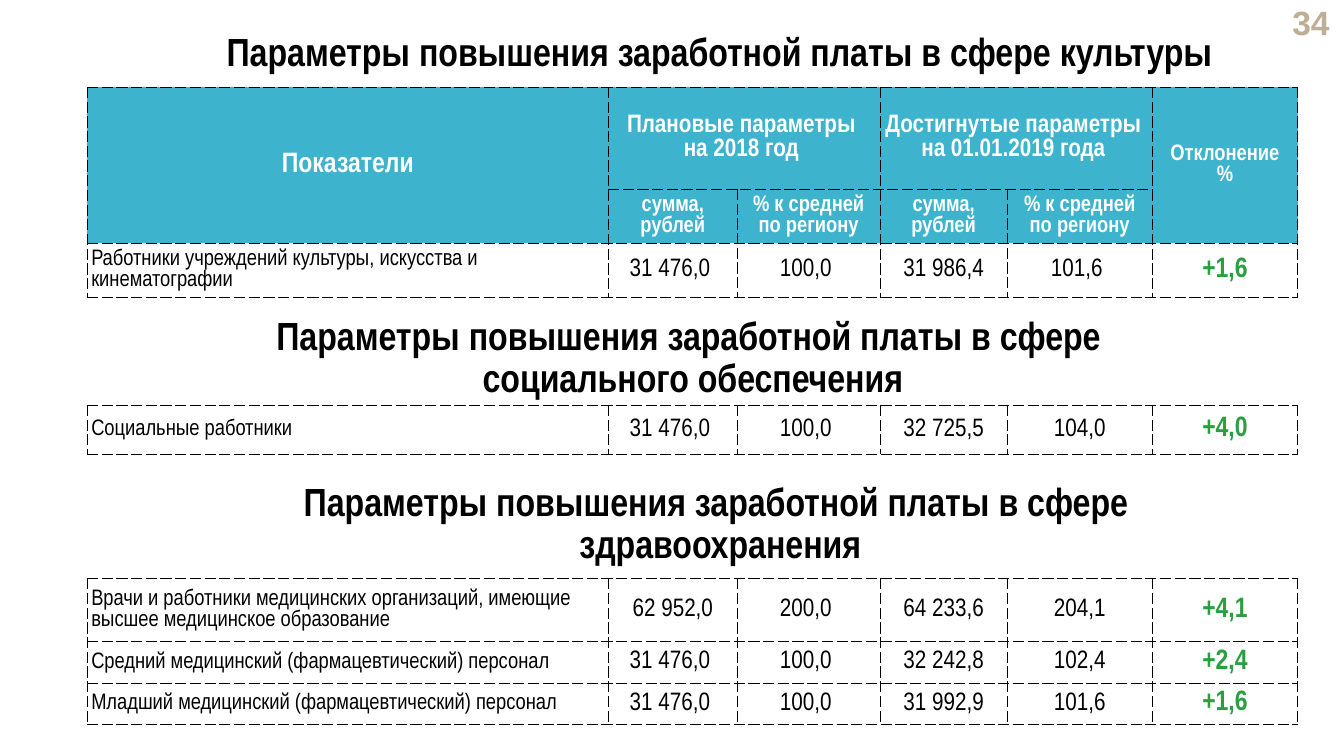
from dataclasses import dataclass

import pptx
import pptx.dml.color
import pptx.enum.text
import pptx.oxml
import pptx.oxml.ns
import pptx.util
from pptx.util import Cm

COLORS = {
    "text": "000000",
    "header": "3DB3CD",
    "header_text": "FFFFFF",
    "body": "FFFFFF",
    "growth": "299F3F",
    "page_number": "BFAE96",
}
NARROW = "Arial Narrow"
ALIGN = pptx.enum.text.PP_ALIGN
MIDDLE = pptx.enum.text.MSO_ANCHOR.MIDDLE
TOP = pptx.enum.text.MSO_ANCHOR.TOP

TABLE_LEFT = 2.2
COLUMN_WIDTHS = [13.13, 3.25, 3.6, 3.2, 3.66, 3.66]
LAST_COLUMN = len(COLUMN_WIDTHS) - 1
HEADER_HEIGHTS = [2.57, 1.22]


@dataclass(frozen=True)
class Style:
    size: int
    color: str = "text"
    bold: bool = False
    align: ALIGN = ALIGN.CENTER
    font: str = NARROW
    line_spacing: float = 1.0


@dataclass(frozen=True)
class Label:
    text: str
    left: float
    top: float
    width: float
    height: float
    style: Style
    anchor: pptx.enum.text.MSO_ANCHOR = TOP


@dataclass(frozen=True)
class HeaderCell:
    text: str
    row: int
    column: int
    size: int
    rows: int = 1
    columns: int = 1


@dataclass(frozen=True)
class Section:
    top: float
    heights: list[float]
    rows: list[list[str]]
    has_header: bool = False


TITLE = Style(28, bold=True, line_spacing=0.9)
NAME = Style(16, align=ALIGN.LEFT)
VALUE = Style(18)
GROWTH = Style(20, "growth", bold=True)

LABELS = [
    Label("34", 31.6, 0.13, 2.16, 0.86,
          Style(24, "page_number", True, ALIGN.RIGHT, "Arial"), MIDDLE),
    Label("Параметры повышения заработной платы в сфере культуры",
          3.15, 0.71, 29.95, 1.6, TITLE),
    Label("Параметры повышения заработной платы в сфере \vсоциального обеспечения",
          6.22, 7.85, 22.48, 0.97, TITLE),
    Label("Параметры повышения заработной платы в сфере \vздравоохранения",
          6.91, 12.04, 22.48, 0.97, TITLE),
]

HEADER = [
    HeaderCell("Показатели", 0, 0, 20, rows=2),
    HeaderCell("Плановые параметры \nна 2018 год ", 0, 1, 18, columns=2),
    HeaderCell("Достигнутые параметры \vна 01.01.2019 года ", 0, 3, 18, columns=2),
    HeaderCell("Отклонение\v%", 0, 5, 16, rows=2),
] + [
    HeaderCell(text, 1, first + offset, 16)
    for first in (1, 3)
    for offset, text in enumerate(["сумма, рублей", "% к средней по региону"])
]

SECTIONS = [
    Section(2.2, [1.37], [
        ["Работники учреждений культуры, искусства и кинематографии",
         "31 476,0 ", "100,0 ", "31 986,4", "101,6 ", "+1,6"],
    ], has_header=True),
    Section(10.21, [1.23], [
        ["Социальные работники",
         "31 476,0 ", "100,0 ", "32 725,5", "104,0", "+4,0"],
    ]),
    Section(14.58, [1.59, 1.04, 1.04], [
        ["Врачи и работники медицинских организаций, имеющие высшее медицинское образование",
         "62 952,0", "200,0 ", "64 233,6", "204,1", "+4,1"],
        ["Средний медицинский (фармацевтический) персонал",
         "31 476,0 ", "100,0 ", "32 242,8", "102,4", "+2,4"],
        ["Младший медицинский (фармацевтический) персонал",
         "31 476,0 ", "100,0 ", "31 992,9", "101,6", "+1,6"],
    ]),
]


def rgb(name: str) -> pptx.dml.color.RGBColor:
    return pptx.dml.color.RGBColor.from_string(COLORS[name])


def write(frame, text: str, style: Style) -> None:
    """Fill a text frame; \\n starts a paragraph and \\v breaks a line."""
    frame.word_wrap = True
    frame.text = text
    for para in frame.paragraphs:
        para.alignment = style.align
        para.line_spacing = style.line_spacing
        para.font.name = style.font
        para.font.size = pptx.util.Pt(style.size)
        para.font.bold = style.bold
        para.font.color.rgb = rgb(style.color)


def add_label(page, label: Label) -> None:
    box = page.shapes.add_textbox(
        Cm(label.left), Cm(label.top), Cm(label.width), Cm(label.height))
    box.text_frame.vertical_anchor = label.anchor
    write(box.text_frame, label.text, label.style)


def format_cell(cell, fill: str) -> None:
    """Set fill, margins and dashed borders."""
    cell.fill.solid()
    cell.fill.fore_color.rgb = rgb(fill)
    cell.vertical_anchor = MIDDLE
    cell.margin_left = cell.margin_right = Cm(0.1)
    cell.margin_top = cell.margin_bottom = 0
    properties = cell._tc.get_or_add_tcPr()
    for index, side in enumerate(["lnL", "lnR", "lnT", "lnB"]):
        properties.insert(index, pptx.oxml.parse_xml(
            f'<a:{side} {pptx.oxml.ns.nsdecls("a")} w="{pptx.util.Pt(0.5)}">'
            f'<a:solidFill><a:srgbClr val="{COLORS["text"]}"/></a:solidFill>'
            f'<a:prstDash val="sysDash"/></a:{side}>'))


def add_header(table) -> None:
    for item in HEADER:
        cell = table.cell(item.row, item.column)
        if item.rows > 1 or item.columns > 1:
            cell.merge(table.cell(item.row + item.rows - 1,
                                  item.column + item.columns - 1))
        write(cell.text_frame, item.text, Style(item.size, "header_text", True))


def add_section(page, section: Section) -> None:
    header_heights = HEADER_HEIGHTS if section.has_header else []
    heights = header_heights + section.heights
    table = page.shapes.add_table(
        len(heights), len(COLUMN_WIDTHS), Cm(TABLE_LEFT), Cm(section.top),
        Cm(sum(COLUMN_WIDTHS)), Cm(sum(heights))).table
    table.first_row = table.horz_banding = False
    for column, width in zip(table.columns, COLUMN_WIDTHS):
        column.width = Cm(width)
    for index, height in enumerate(heights):
        table.rows[index].height = Cm(height)
        for cell in table.rows[index].cells:
            format_cell(cell, "header" if index < len(header_heights) else "body")
    if section.has_header:
        add_header(table)
    for row, texts in enumerate(section.rows, start=len(header_heights)):
        for column, text in enumerate(texts):
            style = {0: NAME, LAST_COLUMN: GROWTH}.get(column, VALUE)
            write(table.cell(row, column).text_frame, text, style)


def main() -> None:
    deck = pptx.Presentation()
    deck.slide_width, deck.slide_height = Cm(33.87), Cm(19.05)
    page = deck.slides.add_slide(deck.slide_layouts[6])
    for label in LABELS:
        add_label(page, label)
    for section in SECTIONS:
        add_section(page, section)
    deck.save("out.pptx")


if __name__ == "__main__":
    main()
